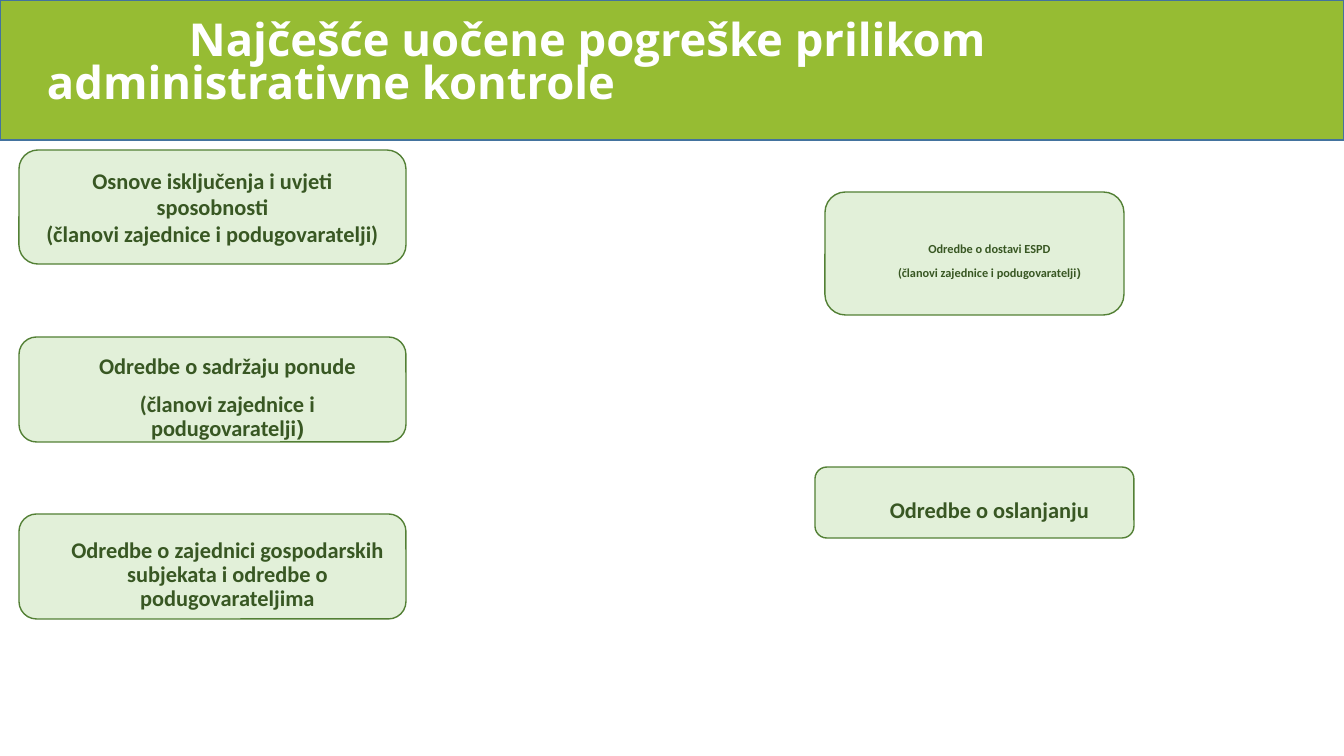
from pptx import Presentation
from pptx.dml.color import RGBColor
from pptx.enum.shapes import MSO_SHAPE
from pptx.enum.text import MSO_ANCHOR, PP_ALIGN
from pptx.util import Emu, Pt

COLORS = {
    "band": "96BC33",
    "band_line": "43739E",
    "card": "E2F0D9",
    "card_line": "538035",
    "card_text": "385723",
    "title": "FFFFFF",
}
MEMBERS = [("(članovi zajednice i podugovaratelji", "Calibri"), (")", "Open Sans")]


def px(length):
    """Turn pixels into EMU."""
    return Emu(round(length * 914400 / 100.8))


def color(name):
    """Look up a named colour."""
    return RGBColor.from_string(COLORS[name])


def add_box(slide, kind, bounds, fill, line):
    """Add a filled and outlined preset shape."""
    shape = slide.shapes.add_shape(kind, *map(px, bounds))
    shape.shadow.inherit = False
    shape.fill.solid()
    shape.fill.fore_color.rgb = color(fill)
    shape.line.color.rgb = color(line)
    shape.line.width = Pt(1)
    return shape


def set_frame(shape, left, top, right, bottom):
    """Wrap text, centre it vertically and set its insets."""
    frame = shape.text_frame
    frame.word_wrap = True
    frame.vertical_anchor = MSO_ANCHOR.MIDDLE
    frame.margin_left, frame.margin_top = px(left), px(top)
    frame.margin_right, frame.margin_bottom = px(right), px(bottom)
    return frame


def add_run(paragraph, text, font_name, size, color_name):
    """Add one bold run."""
    run = paragraph.add_run()
    run.text = text
    run.font.name = font_name
    run.font.size = Pt(size)
    run.font.bold = True
    run.font.color.rgb = color(color_name)


def set_indent(paragraph, left, first):
    """Set the left margin and first-line indent."""
    properties = paragraph._p.get_or_add_pPr()
    properties.set("marL", str(px(left)))
    properties.set("indent", str(px(first)))


def add_title(slide, text):
    """Add the heading over the green band."""
    box = slide.shapes.add_textbox(px(37), px(27), px(1270), px(90))
    frame = set_frame(box, 10, 0, 10, 14)
    paragraph = frame.paragraphs[0]
    set_indent(paragraph, 0, 142)
    paragraph.line_spacing = 0.8
    add_run(paragraph, text, "Open Sans", 32.4, "title")


def add_card(slide, bounds, lines, size=16, spacing=0.9, before=10, indent=30, top=23):
    """Add a rounded card with centred paragraphs."""
    card = add_box(slide, MSO_SHAPE.ROUNDED_RECTANGLE, bounds, "card", "card_line")
    frame = set_frame(card, 10, top, 10, 5)
    for index, runs in enumerate(lines):
        paragraph = frame.add_paragraph() if index else frame.paragraphs[0]
        set_indent(paragraph, indent, 0)
        paragraph.alignment = PP_ALIGN.CENTER
        paragraph.line_spacing = spacing
        paragraph.space_before = Pt(before if index else 0)
        for text, font_name in runs:
            add_run(paragraph, text, font_name, size, "card_text")


def main():
    """Build and save the slide."""
    presentation = Presentation()
    presentation.slide_width, presentation.slide_height = px(1344), px(756)
    slide = presentation.slides.add_slide(presentation.slide_layouts[6])
    add_box(slide, MSO_SHAPE.RECTANGLE, (0, 0, 1344, 140), "band", "band_line")
    add_title(slide, "Najčešće uočene pogreške prilikom administrativne kontrole")
    add_card(
        slide,
        (19, 150, 387, 114),
        [
            [("Osnove isključenja i uvjeti sposobnosti", "Calibri")],
            [("(članovi zajednice i podugovaratelji)", "Calibri")],
        ],
        spacing=1.0,
        before=0,
        indent=0,
        top=5,
    )
    add_card(
        slide,
        (825, 192, 299, 123),
        [[("Odredbe o dostavi ESPD", "Calibri")], MEMBERS],
        size=8.8,
        spacing=0.7,
    )
    add_card(
        slide,
        (19, 337, 387, 105),
        [[("Odredbe o sadržaju ponude", "Calibri")], MEMBERS],
    )
    add_card(slide, (815, 467, 319, 71), [[("Odredbe o oslanjanju", "Calibri")]])
    partners = "Odredbe o zajednici gospodarskih subjekata i odredbe o podugovarateljima"
    add_card(slide, (19, 514, 387, 105), [[(partners, "Calibri")]])
    presentation.save("out.pptx")


if __name__ == "__main__":
    main()
